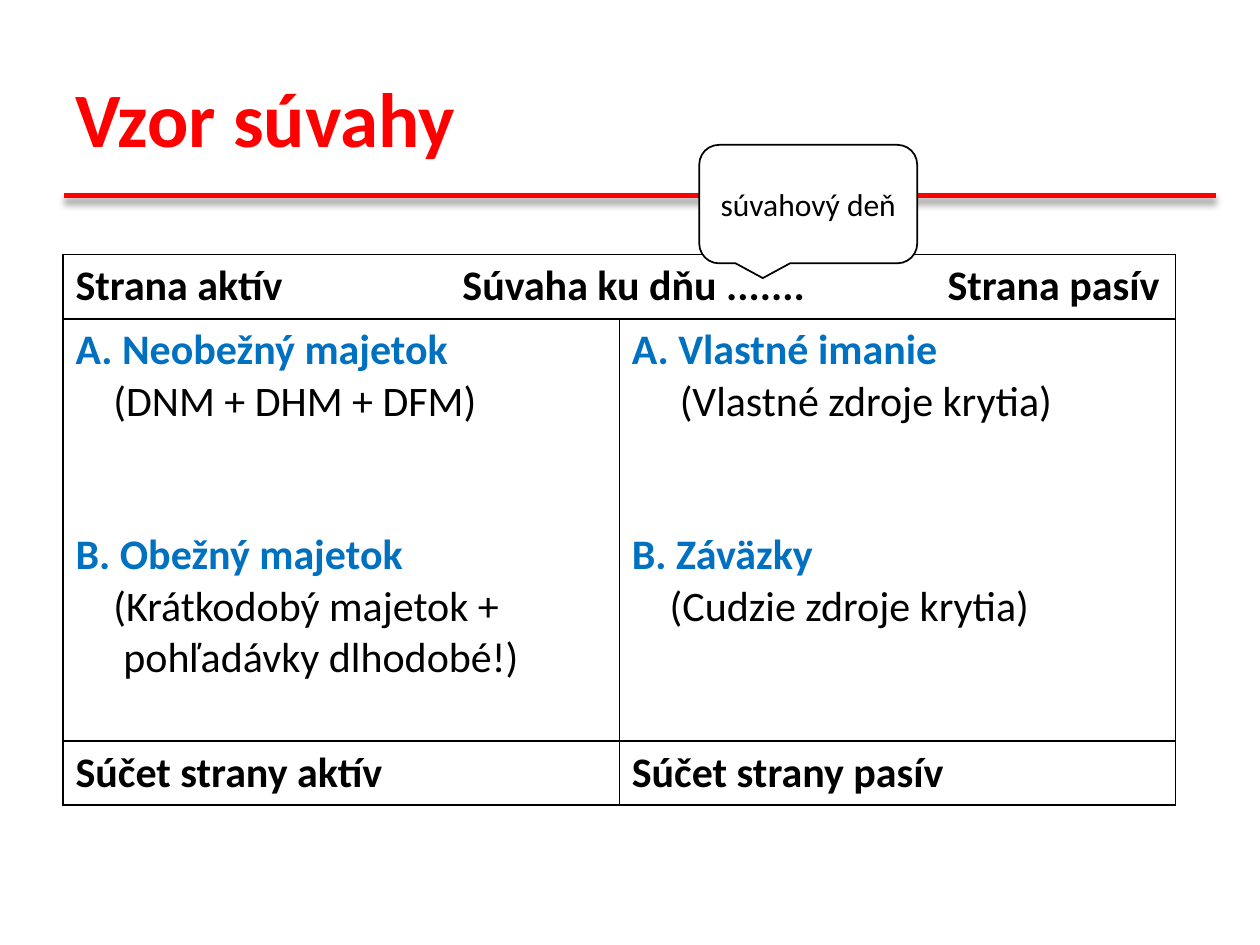
from dataclasses import dataclass
from lxml.etree import SubElement
from pptx import Presentation
from pptx.dml.color import RGBColor
from pptx.enum.shapes import MSO_CONNECTOR, MSO_SHAPE
from pptx.enum.text import MSO_ANCHOR, PP_ALIGN
from pptx.oxml.ns import qn
from pptx.util import Inches, Pt


@dataclass(frozen=True)
class Theme:
    font: str = "Calibri"
    red: str = "FF0000"
    blue: str = "0070C0"
    black: str = "000000"
    white: str = "FFFFFF"
    title: int = 44
    body: int = 24
    note: int = 18


THEME = Theme()
GAP = 58.6  # two body lines, in points

# Each line: text, colour, bold, indent in inches, space before in points
ASSETS = [
    ("A. Neobežný majetok", THEME.blue, True, 0, 0),
    ("(DNM + DHM + DFM)", THEME.black, False, 0.3, 0),
    ("B. Obežný majetok", THEME.blue, True, 0, GAP),
    ("(Krátkodobý majetok +", THEME.black, False, 0.3, 0),
    ("pohľadávky dlhodobé!)", THEME.black, False, 0.38, 0),
]
CLAIMS = [
    ("A. Vlastné imanie", THEME.blue, True, 0, 0),
    ("(Vlastné zdroje krytia)", THEME.black, False, 0.38, 0),
    ("B. Záväzky", THEME.blue, True, 0, GAP),
    ("(Cudzie zdroje krytia)", THEME.black, False, 0.3, 0),
]


def add_run(para, text, size, color, bold=False):
    run = para.add_run()
    run.text = text
    font = run.font
    font.name, font.size, font.bold = THEME.font, Pt(size), bold
    font.color.rgb = RGBColor.from_string(color)


def add_rule(slide):
    rule = slide.shapes.add_connector(
        MSO_CONNECTOR.STRAIGHT, Inches(0.51), Inches(1.55), Inches(9.65), Inches(1.55))
    rule.line.width = Pt(3)
    rule.line.color.rgb = RGBColor.from_string(THEME.red)
    # Soft shadow straight below
    effect = SubElement(rule._element.spPr, qn("a:effectLst"))
    shade = SubElement(effect, qn("a:outerShdw"), blurRad=str(Pt(4)),
                       dist=str(Pt(3)), dir="5400000", rotWithShape="0")
    color = SubElement(shade, qn("a:srgbClr"), val=THEME.black)
    SubElement(color, qn("a:alpha"), val="40000")


def add_title(slide, text):
    box = slide.shapes.add_textbox(Inches(0.5), Inches(0.3), Inches(9), Inches(1.25))
    frame = box.text_frame
    frame.word_wrap = True
    frame.vertical_anchor = MSO_ANCHOR.MIDDLE
    add_run(frame.paragraphs[0], text, THEME.title, THEME.red, True)


def style_cell(cell):
    props = cell._tc.get_or_add_tcPr()
    for side in ("lnL", "lnR", "lnT", "lnB"):
        edge = SubElement(props, qn(f"a:{side}"), w=str(Pt(1)))
        fill = SubElement(edge, qn("a:solidFill"))
        SubElement(fill, qn("a:srgbClr"), val=THEME.black)
    cell.fill.solid()
    cell.fill.fore_color.rgb = RGBColor.from_string(THEME.white)


def fill_cell(cell, lines):
    frame = cell.text_frame
    for i, (text, color, bold, indent, space) in enumerate(lines):
        para = frame.add_paragraph() if i else frame.paragraphs[0]
        if indent:
            para._p.get_or_add_pPr().set("marL", str(Inches(indent)))
        if space:
            para.space_before = Pt(space)
        add_run(para, text, THEME.body, color, bold)


def add_heads(cell, texts, stops):
    para = cell.text_frame.paragraphs[0]
    tabs = SubElement(para._p.get_or_add_pPr(), qn("a:tabLst"))
    for stop in stops:
        SubElement(tabs, qn("a:tab"), pos=str(Inches(stop)), algn="l")
    add_run(para, "\t".join(texts), THEME.body, THEME.black, True)


def add_sheet(slide):
    heights = (0.51, 3.35, 0.51)
    frame = slide.shapes.add_table(
        3, 2, Inches(0.5), Inches(2.02), Inches(8.83), Inches(sum(heights)))
    table = frame.table
    table.first_row = table.horz_banding = False
    for row, height in zip(table.rows, heights):
        row.height = Inches(height)
    for cell in table.iter_cells():
        style_cell(cell)

    # Heading across both sides
    table.cell(0, 0).merge(table.cell(0, 1))
    add_heads(table.cell(0, 0),
              ("Strana aktív", "Súvaha ku dňu .......", "Strana pasív"), (3.07, 6.92))

    # Two sides and their totals
    sides = ((ASSETS, "Súčet strany aktív"), (CLAIMS, "Súčet strany pasív"))
    for col, (lines, total) in enumerate(sides):
        fill_cell(table.cell(1, col), lines)
        fill_cell(table.cell(2, col), [(total, THEME.black, True, 0, 0)])


def add_note(slide, text):
    note = slide.shapes.add_shape(
        MSO_SHAPE.ROUNDED_RECTANGULAR_CALLOUT,
        Inches(5.55), Inches(1.15), Inches(1.73), Inches(0.94))
    note.shadow.inherit = False
    note.fill.solid()
    note.fill.fore_color.rgb = RGBColor.from_string(THEME.white)
    note.line.width = Pt(1)
    note.line.color.rgb = RGBColor.from_string(THEME.black)
    frame = note.text_frame
    frame.word_wrap = True
    frame.vertical_anchor = MSO_ANCHOR.MIDDLE
    para = frame.paragraphs[0]
    para.alignment = PP_ALIGN.CENTER
    add_run(para, text, THEME.note, THEME.black)


def main():
    deck = Presentation()
    deck.slide_width, deck.slide_height = Inches(10), Inches(7.5)
    slide = deck.slides.add_slide(deck.slide_layouts[6])
    add_rule(slide)
    add_title(slide, "Vzor súvahy")
    add_sheet(slide)
    add_note(slide, "súvahový deň")
    deck.save("out.pptx")


if __name__ == "__main__":
    main()
